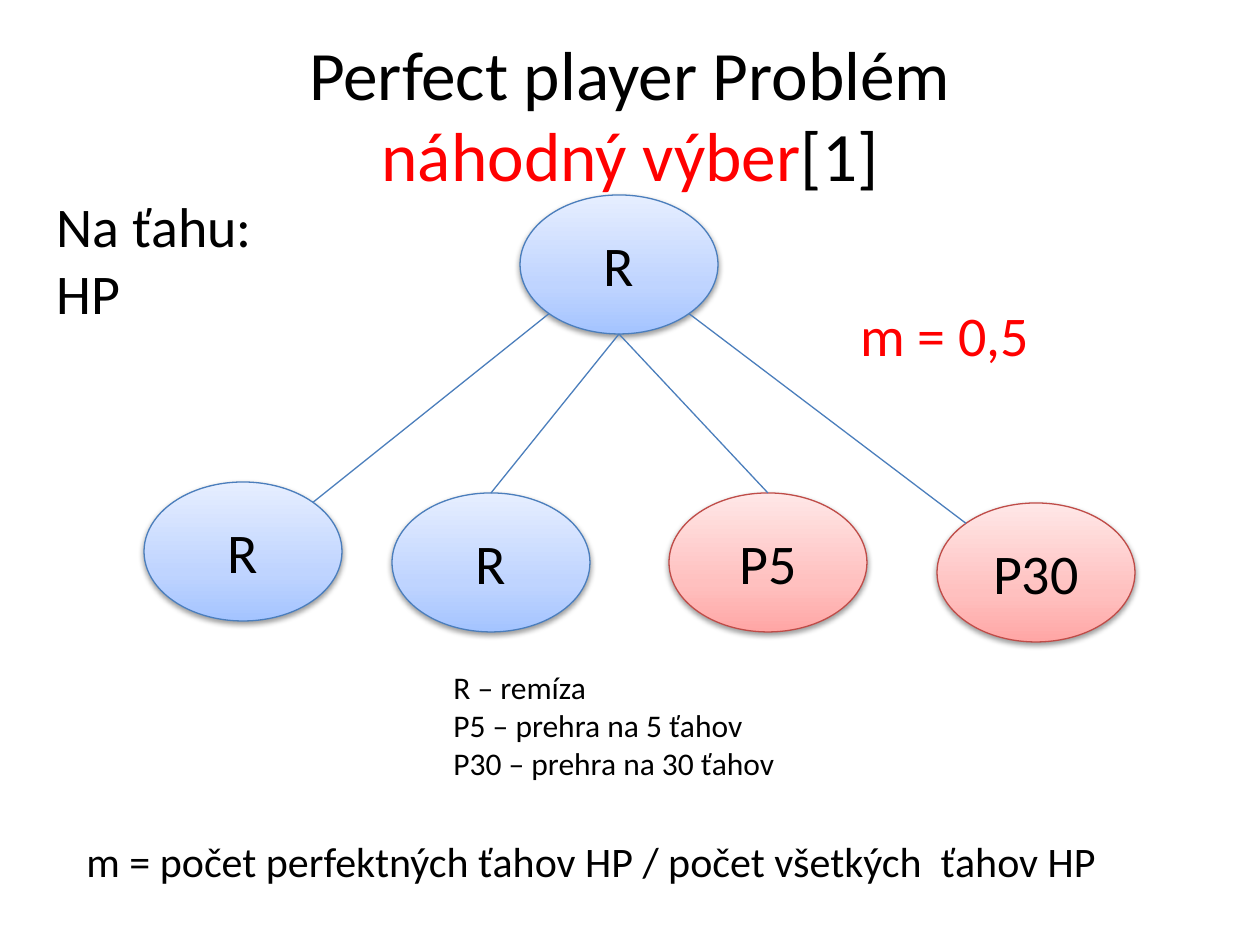
import math
import pptx
import pptx.util
import pptx.dml.color
import pptx.enum.shapes
import pptx.enum.text
import pptx.oxml
import pptx.oxml.ns

PX = 914400 / 126
FONT = "Calibri"
COLORS = {"black": "000000", "red": "FF0000", "blue_line": "4B7EBC", "red_line": "BF4C48"}
GRADIENTS = {
    "blue": [(0, "A4C4FF"), (35, "BFD4FF"), (100, "E6EEFF")],
    "red": [(0, "FFA6A5"), (35, "FFC0BF"), (100, "FFE7E7")],
}

# Content: places in px
TITLE = [("Perfect player Problém", "black"), None, ("náhodný výber", "red"), ("[1]", "black")]
NODE_W, NODE_H = 198, 139
ROOT = ("R", "blue", 520, 195)
# label, colour, left, top, side of the root from which the edge leaves
CHILDREN = [
    ("R", "blue", 144, 482, "left"),
    ("R", "blue", 392, 493, "middle"),
    ("P5", "red", 669, 493, "middle"),
    ("P30", "red", 937, 503, "right"),
]
# lines, box, size, colour
TEXTS = [
    (["Na ťahu: HP"], (44, 185, 248, 149), 32, "black"),
    (["m = 0,5"], (848, 294, 466, 81), 32, "red"),
    (["m = počet perfektných ťahov HP / počet všetkých  ťahov HP"], (74, 829, 1171, 63), 24, "black"),
    (["R – remíza", "P5 – prehra na 5 ťahov", "P30 – prehra na 30 ťahov"], (441, 662, 397, 127), 18, "black"),
]

NS = pptx.oxml.ns.nsdecls("a")
SHADOW = (f'<a:effectLst {NS}><a:outerShdw blurRad="39370" dist="20320" dir="5400000" rotWithShape="0">'
          '<a:srgbClr val="000000"><a:alpha val="38000"/></a:srgbClr></a:outerShdw></a:effectLst>')
NO_EFFECT = f"<a:effectLst {NS}/>"


def emu(*lengths):
    return [round(v * PX) for v in lengths]


def rgb(name):
    return pptx.dml.color.RGBColor.from_string(COLORS[name])


def set_font(font, size, color):
    font.name, font.size = FONT, pptx.util.Pt(size)
    font.color.rgb = rgb(color)


def set_line(shape, color):
    shape.line.color.rgb = rgb(color)
    shape.line.width = pptx.util.Pt(0.75)


def add_node(label, color, left, top):
    sp = s.shapes.add_shape(pptx.enum.shapes.MSO_SHAPE.OVAL, *emu(left, top, NODE_W, NODE_H))
    set_line(sp, color + "_line")
    stops = "".join(f'<a:gs pos="{pos * 1000}"><a:srgbClr val="{c}"/></a:gs>' for pos, c in GRADIENTS[color])
    fill = pptx.oxml.parse_xml(f'<a:gradFill {NS} rotWithShape="1"><a:gsLst>{stops}</a:gsLst>'
                               '<a:lin ang="16200000" scaled="0"/></a:gradFill>')
    sp_pr = sp._element.spPr
    sp_pr.find(pptx.oxml.ns.qn("a:prstGeom")).addnext(fill)
    sp_pr.append(pptx.oxml.parse_xml(SHADOW))
    sp.text_frame.vertical_anchor = pptx.enum.text.MSO_ANCHOR.MIDDLE
    p = sp.text_frame.paragraphs[0]
    p.text, p.alignment = label, pptx.enum.text.PP_ALIGN.CENTER
    set_font(p.font, 32, "black")
    return sp


def rim(left, top, dx, dy):
    """Point on a node's outline in the direction (dx, dy)."""
    length = math.hypot(dx, dy)
    return left + NODE_W / 2 * (1 + dx / length), top + NODE_H / 2 * (1 + dy / length)


prs = pptx.Presentation()
prs.slide_width, prs.slide_height = emu(1260, 945)
s = prs.slides.add_slide(prs.slide_layouts[5])

# Title
title = s.shapes.title
title.left, title.top, title.width, title.height = emu(63, 38, 1134, 157)
tf = title.text_frame
tf.auto_size = pptx.enum.text.MSO_AUTO_SIZE.NONE
tf.vertical_anchor = pptx.enum.text.MSO_ANCHOR.MIDDLE
p = tf.paragraphs[0]
p.alignment = pptx.enum.text.PP_ALIGN.CENTER
p.line_spacing = 0.97
set_font(p.font, 39.6, "black")
for part in TITLE:
    if part is None:
        p.add_line_break()
        continue
    r = p.add_run()
    r.text = part[0]
    set_font(r.font, 39.6, part[1])

# Tree: root, children and the edges between them
add_node(*ROOT)
for label, color, left, top, side in CHILDREN:
    child = add_node(label, color, left, top)
    dx = {"left": -1, "middle": 0, "right": 1}[side]
    start = rim(*ROOT[2:], dx, 1)
    end = rim(left, top, -dx, -1)
    edge = s.shapes.add_connector(pptx.enum.shapes.MSO_CONNECTOR.STRAIGHT, *emu(*start, *end))
    if side == "middle":
        edge.end_connect(child, 0)
    set_line(edge, "blue_line")
    edge._element.spPr.append(pptx.oxml.parse_xml(NO_EFFECT))

# Notes around the tree
for lines, box, size, color in TEXTS:
    tf = s.shapes.add_textbox(*emu(*box)).text_frame
    tf.word_wrap = True
    tf.auto_size = pptx.enum.text.MSO_AUTO_SIZE.SHAPE_TO_FIT_TEXT
    tf.text = "\n".join(lines)
    for p in tf.paragraphs:
        set_font(p.font, size, color)

prs.save("out.pptx")
